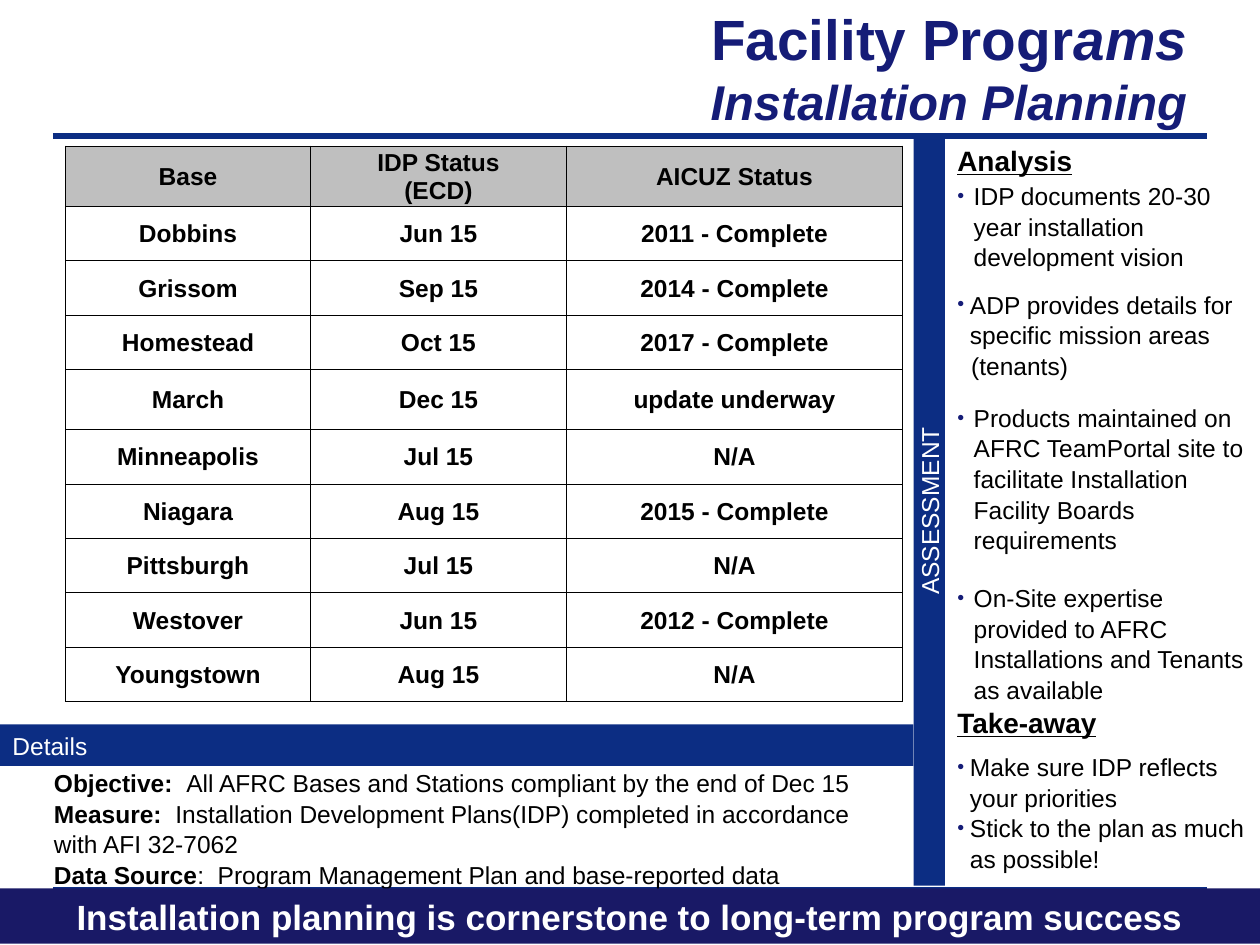
import dataclasses
import pptx
import pptx.dml.color
import pptx.enum.shapes
import pptx.enum.text
import pptx.oxml
import pptx.oxml.ns
import pptx.util

ALIGN = pptx.enum.text.PP_ALIGN
ANCHOR = pptx.enum.text.MSO_ANCHOR
CELL = 0.1  # inches per grid step: 100 columns by 75 rows


@dataclasses.dataclass(frozen=True)
class Theme:
    font: str = "Arial"
    blue: str = "0C2D83"
    navy: str = "191966"
    title: str = "151C77"
    grey: str = "BFBFBF"
    white: str = "FFFFFF"
    black: str = "000000"
    body: float = 14
    head: float = 16
    foot: float = 20
    main: float = 32.4
    sub: float = 27.9
    rule: float = 3
    edge: float = 0.5
    lead: float = 1.04


THEME = Theme()


@dataclasses.dataclass(frozen=True)
class Box:
    x: float
    y: float
    w: float
    h: float

    def inner(self, x, y, w, h):
        return Box(self.x + x, self.y + y, w, h)

    def emu(self):
        return [grid(v) for v in (self.x, self.y, self.w, self.h)]


def grid(steps):
    return pptx.util.Inches(steps * CELL)


def color(code):
    return pptx.dml.color.RGBColor.from_string(code)


def add_run(para, text, size=THEME.body, ink=THEME.black, bold=False,
            slant=False, under=False):
    run = para.add_run()
    run.text = text
    font = run.font
    font.name, font.size = THEME.font, pptx.util.Pt(size)
    font.bold, font.italic, font.underline = bold, slant, under
    font.color.rgb = color(ink)


def add_text(slide, box):
    frame = slide.shapes.add_textbox(*box.emu()).text_frame
    frame.word_wrap = True
    return frame


def next_para(frame, first):
    return frame.paragraphs[0] if first else frame.add_paragraph()


def add_bar(slide, box, fill):
    bar = slide.shapes.add_shape(
        pptx.enum.shapes.MSO_SHAPE.RECTANGLE, *box.emu())
    bar.shadow.inherit = False
    bar.fill.solid()
    bar.fill.fore_color.rgb = color(fill)
    bar.line.fill.background()
    frame = bar.text_frame
    frame.word_wrap = True
    frame.vertical_anchor = ANCHOR.MIDDLE
    frame.margin_top = frame.margin_bottom = 0
    return frame


def add_rule(slide, box):
    x, y, w, _ = box.emu()
    line = slide.shapes.add_connector(
        pptx.enum.shapes.MSO_CONNECTOR.STRAIGHT, x, y, x + w, y)
    line.line.color.rgb = color(THEME.blue)
    line.line.width = pptx.util.Pt(THEME.rule)
    props = line._element.spPr
    props.append(props.makeelement(pptx.oxml.ns.qn("a:effectLst"), {}))


def add_list(slide, box, items):
    """Each item: text, left indent, bullet shown, space before."""
    frame = add_text(slide, box)
    for i, (text, left, dot, gap) in enumerate(items):
        para = next_para(frame, i == 0)
        para.line_spacing = THEME.lead
        para.space_before = pptx.util.Pt(gap)
        props = para._p.get_or_add_pPr()
        props.set("marL", str(grid(left)))
        props.set("indent", str(-grid(left) if dot else 0))
        if dot:
            ns = pptx.oxml.ns.nsdecls("a")
            for tag in (f'<a:buClr {ns}><a:srgbClr val="{THEME.title}"/></a:buClr>',
                        f'<a:buSzPct {ns} val="80000"/>',
                        f'<a:buFont {ns} typeface="{THEME.font}"/>',
                        f'<a:buChar {ns} char="•"/>'):
                props.append(pptx.oxml.parse_xml(tag))
        add_run(para, text)


def add_head(slide, box, text):
    add_run(add_text(slide, box).paragraphs[0], text, THEME.head,
            bold=True, under=True)


def draw_title(slide, box):
    frame = add_text(slide, box)
    frame.vertical_anchor = ANCHOR.MIDDLE
    para = frame.paragraphs[0]
    para.alignment = ALIGN.RIGHT
    add_run(para, "Facility Progr", THEME.main, THEME.title, True)
    add_run(para, "ams", THEME.main, THEME.title, True, True)
    para.add_line_break()
    add_run(para, "Installation Planning", THEME.sub, THEME.title, True, True)


def frame_cell(cell):
    props = cell._tc.get_or_add_tcPr()
    width = pptx.util.Pt(THEME.edge)
    for i, side in enumerate("LRTB"):
        props.insert(i, pptx.oxml.parse_xml(
            f'<a:ln{side} {pptx.oxml.ns.nsdecls("a")} w="{width}"><a:solidFill>'
            f'<a:srgbClr val="{THEME.black}"/></a:solidFill></a:ln{side}>'))


def draw_table(slide, box):
    rows = [("Base", "IDP Status\n(ECD)", "AICUZ Status"),
            ("Dobbins", "Jun 15", "2011 - Complete"),
            ("Grissom", "Sep 15", "2014 - Complete"),
            ("Homestead", "Oct 15", "2017 - Complete"),
            ("March", "Dec 15", "update underway"),
            ("Minneapolis", "Jul 15", "N/A"),
            ("Niagara", "Aug 15", "2015 - Complete"),
            ("Pittsburgh", "Jul 15", "N/A"),
            ("Westover", "Jun 15", "2012 - Complete"),
            ("Youngstown", "Aug 15", "N/A")]
    table = slide.shapes.add_table(len(rows), 3, *box.emu()).table
    table.first_row = table.horz_banding = False
    for col, width in zip(table.columns, (19.45, 20.3, 26.7)):
        col.width = grid(width)
    for r, row in enumerate(rows):
        table.rows[r].height = grid(4.77 if r in (0, 4) else 4.32)
        for c, text in enumerate(row):
            cell = table.cell(r, c)
            cell.vertical_anchor = ANCHOR.MIDDLE
            cell.margin_left = cell.margin_right = cell.margin_top = grid(0.1)
            cell.margin_bottom = 0
            if r == 0:
                cell.fill.solid()
                cell.fill.fore_color.rgb = color(THEME.grey)
            else:
                cell.fill.background()
            frame_cell(cell)
            for i, line in enumerate(text.split("\n")):
                para = next_para(cell.text_frame, i == 0)
                para.alignment = ALIGN.CENTER
                add_run(para, line, bold=True)


def draw_notes(slide, box):
    # Heading bar
    bar = add_bar(slide, box.inner(0, 0, box.w, 3.3), THEME.blue)
    bar.paragraphs[0].alignment = ALIGN.LEFT
    add_run(bar.paragraphs[0], "Details", ink=THEME.white)
    # Labelled lines
    frame = add_text(slide, box.inner(3.3, 2.9, 68.3, 10.4))
    lines = [("Objective:  ", "All AFRC Bases and Stations compliant by the end of Dec 15"),
             ("Measure:  ", "Installation Development Plans(IDP) completed in accordance with AFI 32-7062"),
             ("Data Source", ":  Program Management Plan and base-reported data")]
    for i, (label, text) in enumerate(lines):
        para = next_para(frame, i == 0)
        para.line_spacing = THEME.lead
        add_run(para, label, bold=True)
        add_run(para, text)


def draw_side(slide, box):
    # Upright band
    band = add_bar(slide, box.inner(0, 0, 2.5, box.h), THEME.blue)
    band.margin_left = band.margin_right = 0
    band._txBody.bodyPr.set("vert", "vert270")
    band.paragraphs[0].alignment = ALIGN.CENTER
    add_run(band.paragraphs[0], "ASSESSMENT", ink=THEME.white)
    # Two headed lists
    wide = box.w - 2.5
    add_head(slide, box.inner(2.5, 0.1, wide, 4), "Analysis")
    add_list(slide, box.inner(2.5, 3, wide, 42.5), [
        ("IDP documents 20-30 year installation development vision", 1.3, True, 0),
        ("ADP provides details for specific mission areas", 1, True, 9.5),
        ("(tenants)", 1.1, False, 0),
        ("Products maintained on AFRC TeamPortal site to facilitate "
         "Installation Facility Boards requirements", 1.3, True, 12.4),
        ("On-Site expertise provided to AFRC Installations and Tenants "
         "as available", 1.3, True, 15.8)])
    add_head(slide, box.inner(2.5, 44.7, wide, 4.2), "Take-away")
    add_list(slide, box.inner(2.5, 48.3, wide, 11.5), [
        ("Make sure IDP reflects your priorities", 1, True, 0),
        ("Stick to the plan as much as possible!", 1, True, 0)])


def draw_foot(slide, box):
    para = add_bar(slide, box, THEME.navy).paragraphs[0]
    para.alignment = ALIGN.CENTER
    add_run(para, "Installation planning is cornerstone to long-term program success",
            THEME.foot, THEME.white, True)


def main():
    deck = pptx.Presentation()
    page = Box(0, 0, 100, 75)
    deck.slide_width, deck.slide_height = grid(page.w), grid(page.h)
    slide = deck.slides.add_slide(deck.slide_layouts[6])
    # Rules above and below the content
    for y in (10.8, 70.6):
        add_rule(slide, page.inner(4.2, y, 91.6, 0))
    draw_side(slide, page.inner(72.5, 10.8, 27.5, 59.5))
    draw_notes(slide, page.inner(0, 57.5, 72.5, 13.3))
    draw_table(slide, page.inner(5.2, 11.6, 66.45, 44.1))
    draw_foot(slide, page.inner(0, 70.5, 100, 4.4))
    draw_title(slide, page.inner(2.5, 0.6, 92.7, 9.4))
    deck.save("out.pptx")


if __name__ == "__main__":
    main()
